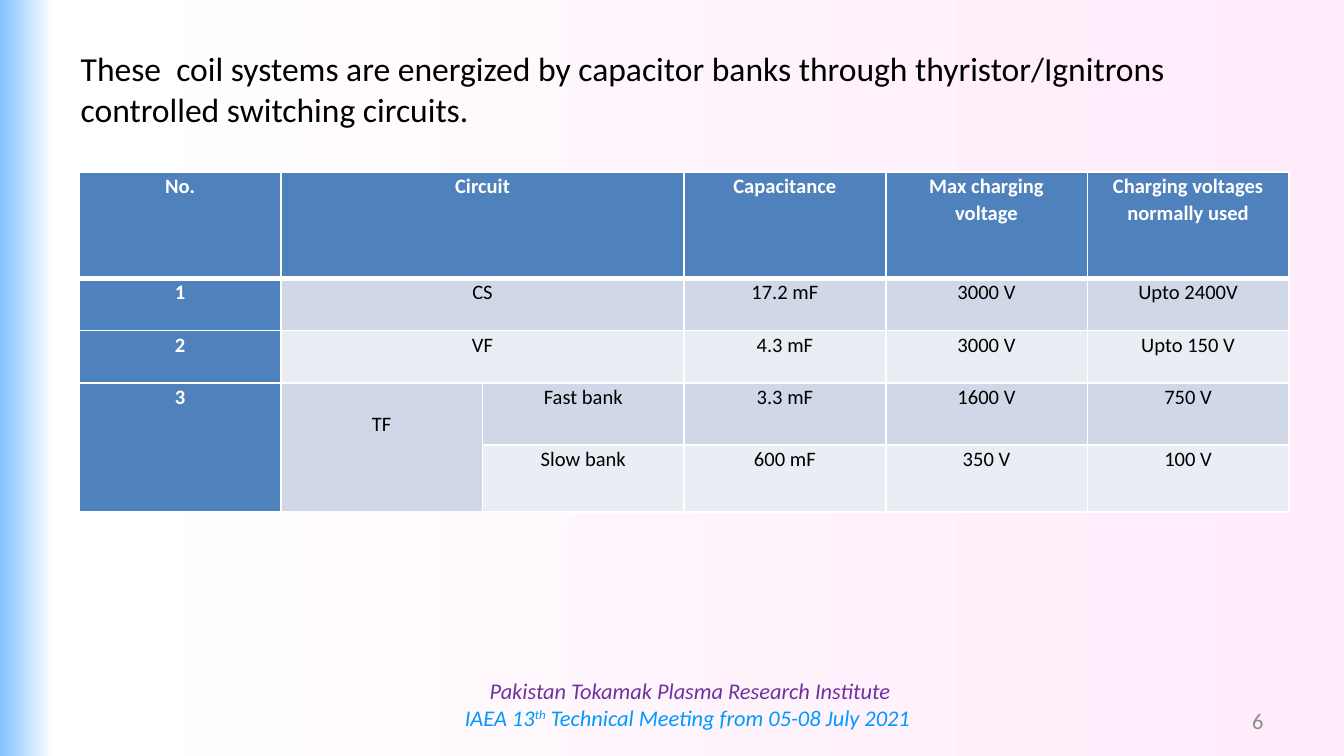
"""Build a slide that tabulates the capacitor banks of the coil systems."""
from copy import deepcopy

from lxml.etree import SubElement
from pptx import Presentation
from pptx.dml.color import RGBColor
from pptx.enum.text import MSO_ANCHOR, MSO_AUTO_SIZE, PP_ALIGN
from pptx.oxml.ns import qn
from pptx.util import Inches, Pt

TITLE = ("These  coil systems are energized by capacitor banks through "
         "thyristor/Ignitrons controlled switching circuits.")
ROWS = [
    ("No.", "Circuit", "", "Capacitance", "Max charging voltage",
     "Charging voltages normally used"),
    ("1", "CS", "", "17.2 mF", "3000 V", "Upto 2400V"),
    ("2", "VF", "", "4.3 mF", "3000 V", "Upto 150 V"),
    ("3", "TF", "Fast bank", "3.3 mF", "1600 V", "750 V"),
    ("", "", "Slow bank", "600 mF", "350 V", "100 V"),
]
SPANS = [((0, 1), (0, 2)), ((1, 1), (1, 2)), ((2, 1), (2, 2)),
         ((3, 0), (4, 0)), ((3, 1), (4, 1))]
HEIGHTS = [0.79, 0.39, 0.39, 0.46, 0.5]
FOOTER = [
    ("7030A0", ["Pakistan Tokamak Plasma Research Institute"]),
    ("0099FF", ["IAEA 13", "th", " Technical Meeting from 05-08 July 2021 "]),
]
STOPS = [(0, "85C2FF"), (0.04, "FFFFFF"), (1, "FFEBFA")]
HEAD, BANDS = "4F81BD", ("E9EDF4", "D0D8E8")


def color(code):
    return RGBColor.from_string(code)


def style(para, size, code, align, bold=False, italic=False):
    para.alignment = align
    font = para.font
    font.name, font.size = "Calibri", Pt(size)
    font.bold, font.italic = bold, italic
    font.color.rgb = color(code)


def place(shape, left, top, width, height):
    shape.left, shape.top = Inches(left), Inches(top)
    shape.width, shape.height = Inches(width), Inches(height)


def paint(slide):
    fill = slide.background.fill
    fill.gradient()
    fill.gradient_angle = 0
    first = next(slide.element.iter(qn("a:gs")))
    first.addnext(deepcopy(first))
    for stop, (pos, code) in zip(fill.gradient_stops, STOPS):
        stop.position = pos
        stop.color.rgb = color(code)


def border(cell, row):
    props = cell._tc.get_or_add_tcPr()
    wide = {0: "B", 1: "T"}.get(row)
    for i, side in enumerate("LRTB"):
        line = props.makeelement(qn("a:ln" + side),
                                 {"w": str(Pt(3 if side == wide else 1))})
        solid = SubElement(line, qn("a:solidFill"))
        SubElement(solid, qn("a:srgbClr"), val="FFFFFF")
        props.insert(i, line)


def add_grid(slide):
    grid = slide.shapes.add_table(len(ROWS), 6, Inches(0.59), Inches(1.28),
                                  Inches(9), Inches(sum(HEIGHTS))).table
    for r, row in enumerate(ROWS):
        grid.rows[r].height = Inches(HEIGHTS[r])
        for c, text in enumerate(row):
            cell = grid.cell(r, c)
            head = r == 0 or c == 0
            cell.text = text
            cell.margin_left = cell.margin_right = Inches(0.08)
            cell.margin_top = Inches(0.2 if text == "TF" else 0)
            cell.margin_bottom = 0
            para = cell.text_frame.paragraphs[0]
            style(para, 11, "FFFFFF" if head else "000000",
                  PP_ALIGN.CENTER, bold=head)
            para.line_spacing = 1.07
            cell.fill.solid()
            cell.fill.fore_color.rgb = color(HEAD if head else BANDS[r % 2])
            border(cell, r)
    for start, end in SPANS:
        grid.cell(*start).merge(grid.cell(*end))


def add_title(slide):
    title = slide.shapes.title
    place(title, 0.5, 0.31, 8.83, 0.71)
    frame = title.text_frame
    frame.text = TITLE
    frame.word_wrap = True
    frame.auto_size = MSO_AUTO_SIZE.NONE
    frame.vertical_anchor = MSO_ANCHOR.TOP
    style(frame.paragraphs[0], 18, "000000", PP_ALIGN.LEFT)


def add_box(slide, left, top, width, height):
    box = slide.shapes.add_textbox(0, 0, 0, 0)
    place(box, left, top, width, height)
    return box.text_frame


def add_footer(slide):
    frame = add_box(slide, 3.33, 4.99, 3.61, 0.5)
    for i, (code, parts) in enumerate(FOOTER):
        para = frame.add_paragraph() if i else frame.paragraphs[0]
        style(para, 12, code, PP_ALIGN.CENTER, italic=True)
        for part in parts:
            run = para.add_run()
            run.text = part
            if part == "th":
                run.font._element.set("baseline", "30000")


def add_number(slide):
    frame = add_box(slide, 7.17, 5.21, 2.33, 0.3)
    frame.text = "6"
    frame.word_wrap = True
    frame.vertical_anchor = MSO_ANCHOR.MIDDLE
    style(frame.paragraphs[0], 12, "8C8C8C", PP_ALIGN.RIGHT)


def main():
    deck = Presentation()
    deck.slide_width, deck.slide_height = Inches(10), Inches(10 * 9 / 16)
    slide = deck.slides.add_slide(deck.slide_layouts[5])
    paint(slide)
    add_number(slide)
    add_title(slide)
    add_grid(slide)
    add_footer(slide)
    deck.save("out.pptx")


if __name__ == "__main__":
    main()
